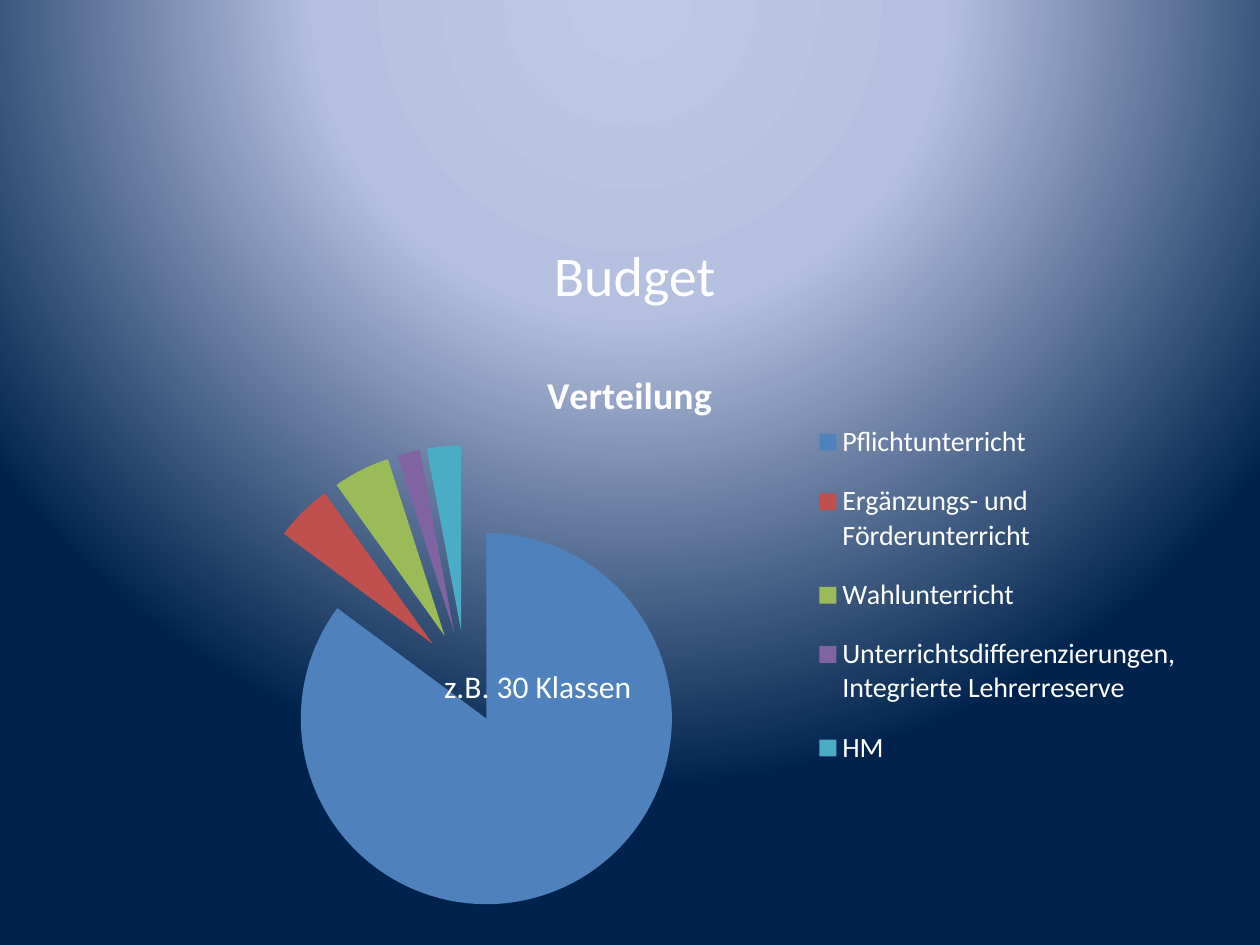
"""Builds the budget slide: an exploded pie chart of how lessons are shared out."""
from dataclasses import dataclass

from pptx import Presentation, oxml
from pptx import util as u
from pptx.chart import data
from pptx.dml import color
from pptx.enum import chart as kinds, text
from pptx.oxml import ns


@dataclass(frozen=True)
class Theme:
    face: str = "Calibri"
    white: str = "FFFFFF"
    glow: tuple = ((0, "BFC9E5"), (40, "B5C0E0"), (100, "00234D"))
    slices: tuple = ("4F81BD", "C0504D", "9BBB59", "8064A2", "4BACC6")
    head: float = 32
    title: float = 21.6
    body: float = 18
    key: float = 16


theme = Theme()


def style(font, size):
    font.name, font.size = theme.face, u.Pt(size)
    font.color.rgb = color.RGBColor.from_string(theme.white)


def label(words, box, size, align):
    frame = slide.shapes.add_textbox(*map(u.Pt, box)).text_frame
    frame.word_wrap = True
    frame.text = words
    line = frame.paragraphs[0]
    line.alignment = align
    style(line.runs[0].font, size)


deck = Presentation()
deck.slide_width, deck.slide_height = u.Pt(720), u.Pt(540)
slide = deck.slides.add_slide(deck.slide_layouts[6])

stops = "".join(
    f'<a:gs pos="{pos * 1000}"><a:srgbClr val="{tone}"/></a:gs>' for pos, tone in theme.glow)
slide.element.cSld.insert(0, oxml.parse_xml(
    f'<p:bg {ns.nsdecls("p", "a")}><p:bgPr><a:gradFill rotWithShape="1">'
    f'<a:gsLst>{stops}</a:gsLst><a:path path="circle">'
    '<a:fillToRect l="50000" t="-80000" r="50000" b="180000"/></a:path>'
    '</a:gradFill><a:effectLst/></p:bgPr></p:bg>'))

label("Budget", (110.7, 133.7, 504, 138.2), theme.head, text.PP_ALIGN.CENTER)

shares = {
    "Pflichtunterricht": 86,
    "Ergänzungs- und Förderunterricht": 5,
    "Wahlunterricht": 5,
    "Unterrichtsdifferenzierungen, Integrierte Lehrerreserve": 2,
    "HM": 3,
}
table = data.CategoryChartData()
table.categories = list(shares)
table.add_series("Verteilung", list(shares.values()))
chart = slide.shapes.add_chart(
    kinds.XL_CHART_TYPE.PIE, *map(u.Pt, (36.5, 196.3, 646.6, 323.3)), table).chart
style(chart.font, theme.body)

chart.has_title = True
chart.chart_title.include_in_layout = False
title = chart.chart_title.text_frame
title.text = "Verteilung"
font = title.paragraphs[0].runs[0].font
style(font, theme.title)
font.bold = True

chart.has_legend = True
chart.legend.position = kinds.XL_LEGEND_POSITION.RIGHT
chart.legend.include_in_layout = False
style(chart.legend.font, theme.key)

pie = chart.plots[0]
pie.vary_by_categories = True
series = pie.series[0]
for i, tone in enumerate(theme.slices):
    fill = series.points[i].format.fill
    fill.solid()
    fill.fore_color.rgb = color.RGBColor.from_string(tone)
series._element.find(ns.qn("c:dPt")).addprevious(
    oxml.parse_xml(f'<c:explosion {ns.nsdecls("c")} val="25"/>'))

area = chart._chartSpace.chart.plotArea
key = chart.legend._element
for part, inner, box in (
    (area, '<c:layoutTarget val="inner"/>', (0.04, 0.18, 0.63, 0.82)),
    (key, "", (0.66, 0.1, 0.33, 0.69)),
):
    for old in part.findall(ns.qn("c:layout")):
        part.remove(old)
    places = "".join(f'<c:{side} val="{val}"/>' for side, val in zip("xywh", box))
    layout = oxml.parse_xml(
        f'<c:layout {ns.nsdecls("c")}><c:manualLayout>{inner}'
        '<c:xMode val="edge"/><c:yMode val="edge"/>'
        f'{places}</c:manualLayout></c:layout>')
    part.insert(0 if part is area else 1, layout)

label("z.B. 30 Klassen", (246.7, 377.7, 124.6, 28.8), theme.body, text.PP_ALIGN.LEFT)

deck.save("out.pptx")
